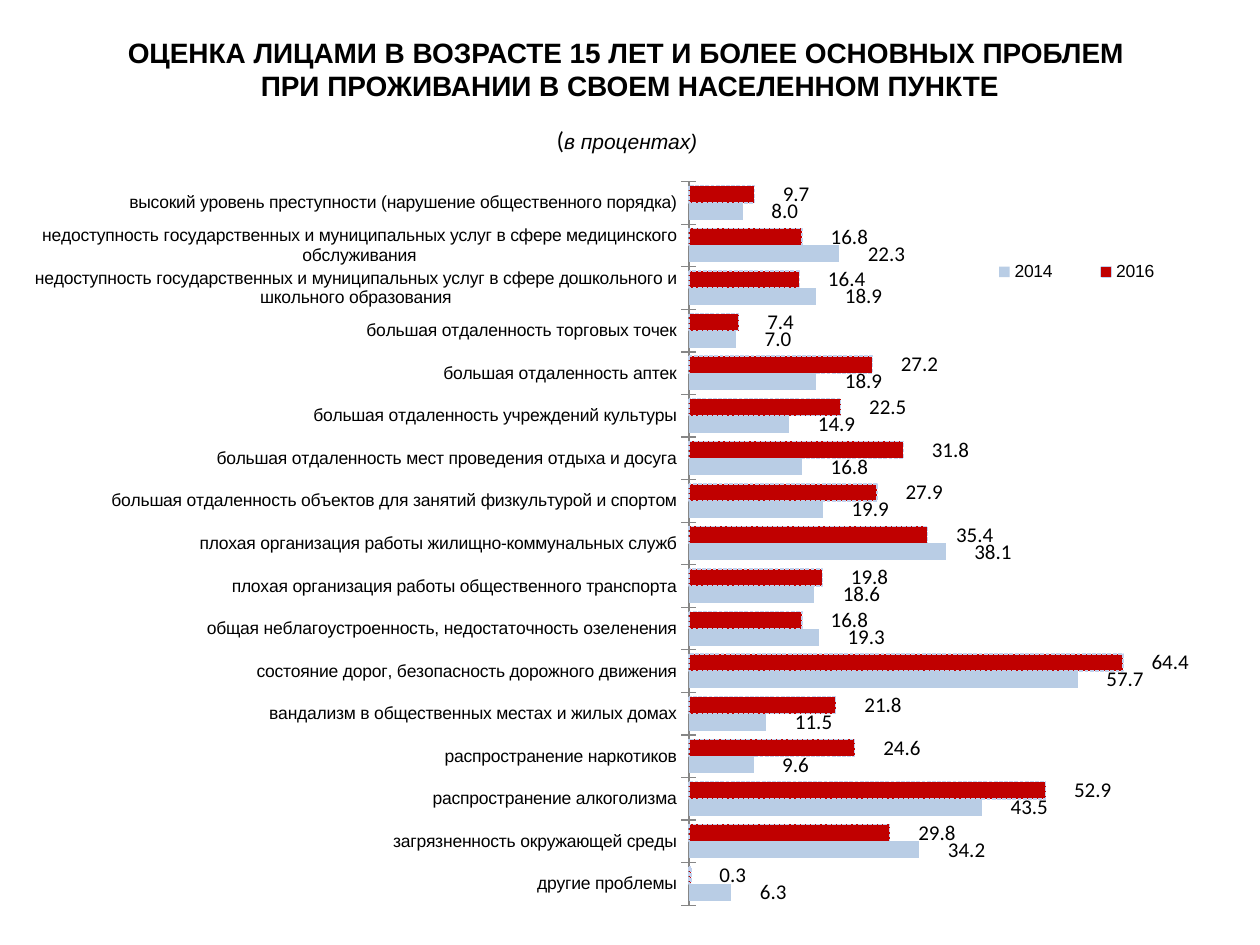
from lxml import etree
from pptx import Presentation
from pptx.chart.data import CategoryChartData
from pptx.dml.color import RGBColor
from pptx.enum.chart import XL_CHART_TYPE, XL_LABEL_POSITION, XL_LEGEND_POSITION, XL_TICK_MARK
from pptx.enum.dml import MSO_LINE
from pptx.enum.text import MSO_ANCHOR, PP_ALIGN
from pptx.oxml.ns import qn
from pptx.util import Inches, Pt

BARS = XL_CHART_TYPE.BAR_CLUSTERED
OUTSIDE = XL_LABEL_POSITION.OUTSIDE_END
RIGHT = XL_LEGEND_POSITION.RIGHT
CROSS = XL_TICK_MARK.CROSS
DASH = MSO_LINE.SQUARE_DOT
TOP = MSO_ANCHOR.TOP
CENTER = PP_ALIGN.CENTER

HEX = {"text": "000000", "axis": "868686", "edge": "C2D1ED",
       "2016": "C00000", "2014": "B9CDE5"}
COLOR = {name: RGBColor.from_string(code) for name, code in HEX.items()}
FORMAT = r"###\ " * 5 + "##0.0"

# Problem, share in 2016, share in 2014
ROWS = [
    ("высокий уровень преступности (нарушение общественного порядка)", 9.7, 8.0),
    ("недоступность государственных и муниципальных услуг в сфере медицинского обслуживания", 16.8, 22.3),
    ("недоступность государственных и муниципальных услуг в сфере дошкольного и школьного образования", 16.4, 18.9),
    ("большая отдаленность торговых точек", 7.4, 7.0),
    ("большая отдаленность аптек", 27.2, 18.9),
    ("большая отдаленность учреждений культуры", 22.5, 14.9),
    ("большая отдаленность мест проведения отдыха и досуга", 31.8, 16.8),
    ("большая отдаленность объектов для занятий физкультурой и спортом", 27.9, 19.9),
    ("плохая организация работы жилищно-коммунальных служб", 35.4, 38.1),
    ("плохая организация работы общественного транспорта", 19.8, 18.6),
    ("общая неблагоустроенность, недостаточность озеленения", 16.8, 19.3),
    ("состояние дорог, безопасность дорожного движения", 64.4, 57.7),
    ("вандализм в общественных местах и жилых домах", 21.8, 11.5),
    ("распространение наркотиков", 24.6, 9.6),
    ("распространение алкоголизма", 52.9, 43.5),
    ("загрязненность окружающей среды", 29.8, 34.2),
    ("другие проблемы", 0.3, 6.3),
]


def write(para, text, size, face="Arial", bold=False, italic=False):
    para.alignment = CENTER
    run = para.add_run()
    run.text = text
    font = run.font
    font.size, font.name, font.bold, font.italic = Pt(size), face, bold, italic
    font.color.rgb = COLOR["text"]


def place(part, index, **box):
    """Give a chart part a manual layout, in shares of the chart's size."""
    for old in part.findall(qn("c:layout")):
        part.remove(old)
    layout = etree.Element(qn("c:layout"))
    part.insert(index, layout)
    manual = etree.SubElement(layout, qn("c:manualLayout"))
    for key, val in box.items():
        etree.SubElement(manual, qn("c:" + key)).set("val", str(val))


prs = Presentation()
prs.slide_width, prs.slide_height = Inches(10), Inches(7.5)
wide = prs.slide_width
slide = prs.slides.add_slide(prs.slide_layouts[5])

# Chart
data = CategoryChartData(number_format=FORMAT)
names, new, old = zip(*ROWS)
data.categories = names
data.add_series("2016", new)
data.add_series("2014", old)
chart = slide.shapes.add_chart(
    BARS, Inches(0.16), Inches(1.17), Inches(9.53), Inches(6.17), data).chart
chart.has_title = False
chart.font.size, chart.font.name = Pt(10), "Calibri"
chart.font.color.rgb = COLOR["text"]

axis = chart.category_axis
axis.reverse_order = True
axis.major_tick_mark = CROSS
axis.tick_labels.font.size, axis.tick_labels.font.name = Pt(10), "Arial"
axis.format.line.color.rgb = COLOR["axis"]
scale = chart.value_axis
scale.minimum_scale, scale.maximum_scale = 0, 70
scale.has_major_gridlines = False
scale.tick_labels.number_format = FORMAT
scale.tick_labels.number_format_is_linked = False
scale.visible = False

plot = chart.plots[0]
plot.gap_width, plot.overlap = 50, 0
plot.vary_by_categories = False
for series in plot.series:
    series.format.fill.solid()
    series.format.fill.fore_color.rgb = COLOR[series.name]
    labels = series.data_labels
    labels.show_value = True
    labels.position = OUTSIDE
    labels.number_format, labels.number_format_is_linked = FORMAT, False
    labels.font.size = Pt(12)
edge = plot.series[0].format.line
edge.color.rgb, edge.width, edge.dash_style = COLOR["edge"], Pt(0.75), DASH

chart.has_legend = True
legend = chart.legend
legend.position = RIGHT
legend.include_in_layout = False
legend.font.size, legend.font.name = Pt(10), "Arial"
place(chart.element.find(".//" + qn("c:plotArea")), 0, layoutTarget="inner",
      xMode="edge", yMode="edge", x=0.557, y=0.044, w=0.393, h=0.931)
place(chart.element.find(".//" + qn("c:legend")), 1,
      xMode="edge", yMode="edge", x=0.78, y=0.13, w=0.2, h=0.06)

# Title and unit
title = slide.shapes.title
title.left, title.top, title.width, title.height = 0, Inches(0.23), wide, Inches(0.64)
frame = title.text_frame
frame.word_wrap, frame.vertical_anchor = True, TOP
write(frame.paragraphs[0], "ОЦЕНКА ЛИЦАМИ В ВОЗРАСТЕ 15 ЛЕТ И БОЛЕЕ ОСНОВНЫХ ПРОБЛЕМ ", 16, bold=True)
write(frame.add_paragraph(), "ПРИ ПРОЖИВАНИИ В СВОЕМ НАСЕЛЕННОМ ПУНКТЕ", 16, bold=True)
for para in frame.paragraphs:
    para.space_before = Pt(0)

unit = slide.shapes.add_textbox(0, Inches(0.94), wide, Inches(0.34)).text_frame
unit.word_wrap = True
write(unit.paragraphs[0], "(", 14, face="Calibri")
write(unit.paragraphs[0], "в процентах) ", 12, italic=True)

prs.save("out.pptx")
